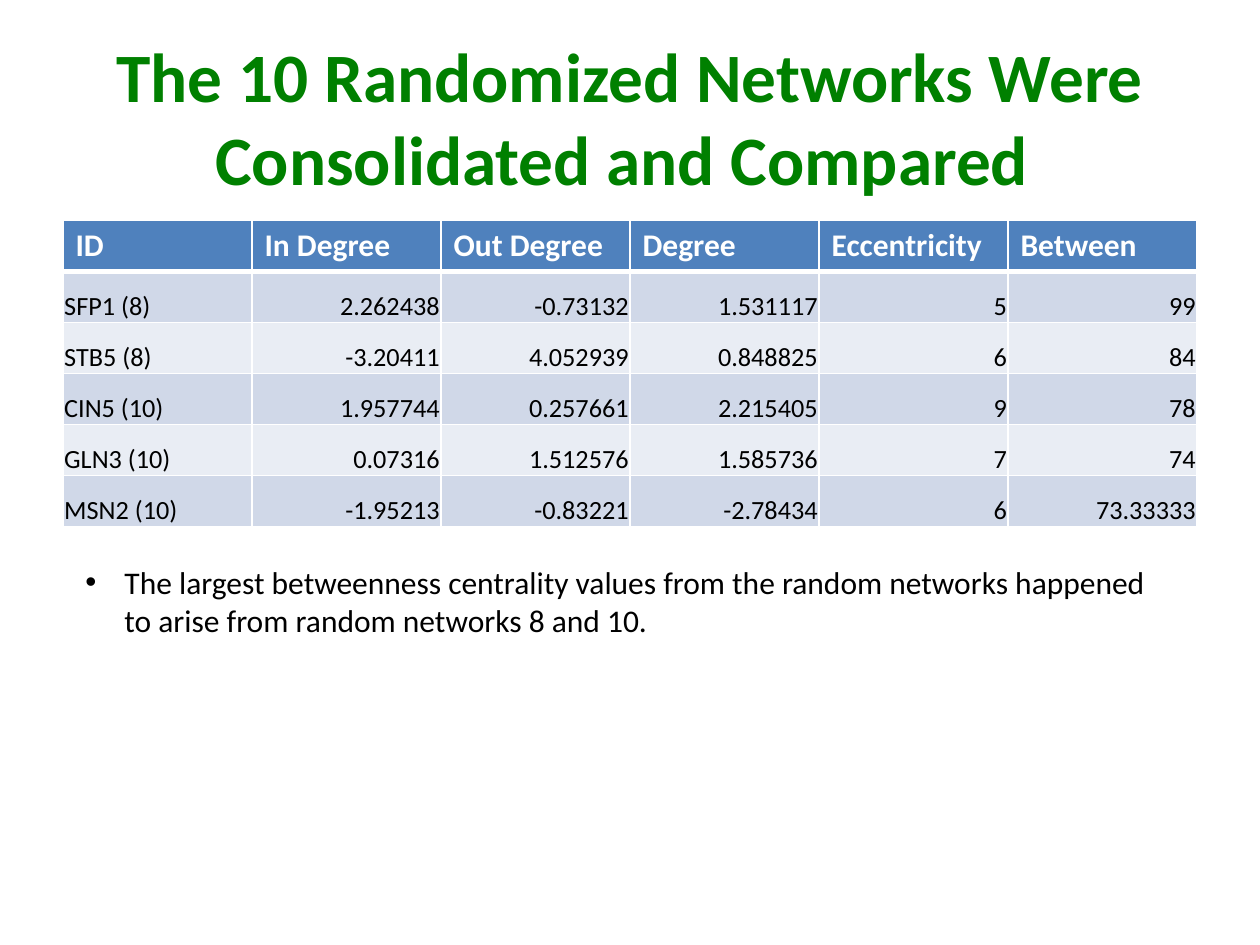
from dataclasses import dataclass

from lxml import etree
from pptx import Presentation
from pptx.dml.color import RGBColor
from pptx.enum.text import MSO_ANCHOR, PP_ALIGN
from pptx.oxml.ns import qn
from pptx.util import Inches, Pt

LEFT, CENTER, RIGHT = PP_ALIGN.LEFT, PP_ALIGN.CENTER, PP_ALIGN.RIGHT
MIDDLE, BOTTOM = MSO_ANCHOR.MIDDLE, MSO_ANCHOR.BOTTOM


@dataclass(frozen=True)
class Theme:
    font: str = "Calibri"
    green: str = "008000"
    blue: str = "4F81BD"
    bands: tuple = ("D0D8E8", "E9EDF4")
    white: str = "FFFFFF"
    black: str = "000000"
    title: float = 39.6
    body: float = 18
    cell: float = 15


THEME = Theme()

TITLE = "The 10 Randomized Networks Were Consolidated and Compared "
HEADS = ["ID", "In Degree", "Out Degree", "Degree", "Eccentricity", "Between"]
ROWS = [
    ["SFP1 (8)", "2.262438", "-0.73132", "1.531117", "5", "99"],
    ["STB5 (8)", "-3.20411", "4.052939", "0.848825", "6", "84"],
    ["CIN5 (10)", "1.957744", "0.257661", "2.215405", "9", "78"],
    ["GLN3 (10)", "0.07316", "1.512576", "1.585736", "7", "74"],
    ["MSN2 (10)", "-1.95213", "-0.83221", "-2.78434", "6", "73.33333"],
]
NOTE = ("The largest betweenness centrality values from the random networks "
        "happened to arise from random networks 8 and 10.")


def write(frame, text, size, color, bold=False, align=LEFT):
    frame.text = text
    para = frame.paragraphs[0]
    para.alignment = align
    font = para.runs[0].font
    font.name, font.size, font.bold = THEME.font, Pt(size), bold
    font.color.rgb = RGBColor.from_string(color)
    return para


def add_text(slide, box, *style, **more):
    frame = slide.shapes.add_textbox(*map(Inches, box)).text_frame
    frame.word_wrap = True
    return frame, write(frame, *style, **more)


def add_title(slide, box):
    frame, _ = add_text(slide, box, TITLE, THEME.title, THEME.green,
                        bold=True, align=CENTER)
    frame.vertical_anchor = MIDDLE


def add_edges(cell, top, bottom):
    props = cell._tc.get_or_add_tcPr()
    for side, width in (("L", 1), ("R", 1), ("T", top), ("B", bottom)):
        line = etree.SubElement(props, qn(f"a:ln{side}"), w=str(Pt(width)))
        fill = etree.SubElement(line, qn("a:solidFill"))
        etree.SubElement(fill, qn("a:srgbClr"), val=THEME.white)


def paint(cell, color):
    cell.fill.solid()
    cell.fill.fore_color.rgb = RGBColor.from_string(color)


def add_grid(slide, box):
    grid = slide.shapes.add_table(len(ROWS) + 1, len(HEADS),
                                  *map(Inches, box)).table
    grid.horz_banding = False

    # Header row, with a thick rule below
    for col, text in enumerate(HEADS):
        cell = grid.cell(0, col)
        write(cell.text_frame, text, THEME.body, THEME.white, bold=True)
        add_edges(cell, 1, 3)
        paint(cell, THEME.blue)

    # Data rows in alternating bands
    for row, values in enumerate(ROWS, 1):
        for col, text in enumerate(values):
            cell = grid.cell(row, col)
            write(cell.text_frame, text, THEME.cell, THEME.black,
                  align=RIGHT if col else LEFT)
            cell.vertical_anchor = BOTTOM
            cell.margin_left = cell.margin_right = cell.margin_top = Inches(0.01)
            cell.margin_bottom = 0
            add_edges(cell, 3 if row == 1 else 1, 1)
            paint(cell, THEME.bands[(row - 1) % 2])


def add_note(slide, box):
    _, para = add_text(slide, box, NOTE, THEME.body, THEME.black)
    props = para._p.get_or_add_pPr()
    indent = Inches(0.31)
    props.set("marL", str(indent))
    props.set("indent", str(-indent))
    etree.SubElement(props, qn("a:buFont"), typeface="Arial")
    etree.SubElement(props, qn("a:buChar"), char="•")


def main():
    deck = Presentation()
    deck.slide_width, deck.slide_height = Inches(10), Inches(7.5)
    slide = deck.slides.add_slide(deck.slide_layouts[6])
    add_title(slide, (0.5, 0.3, 9, 1.25))
    add_grid(slide, (0.5, 1.75, 9, 2.43))
    add_note(slide, (0.58, 4.42, 8.83, 1.31))
    deck.save("out.pptx")


if __name__ == "__main__":
    main()
